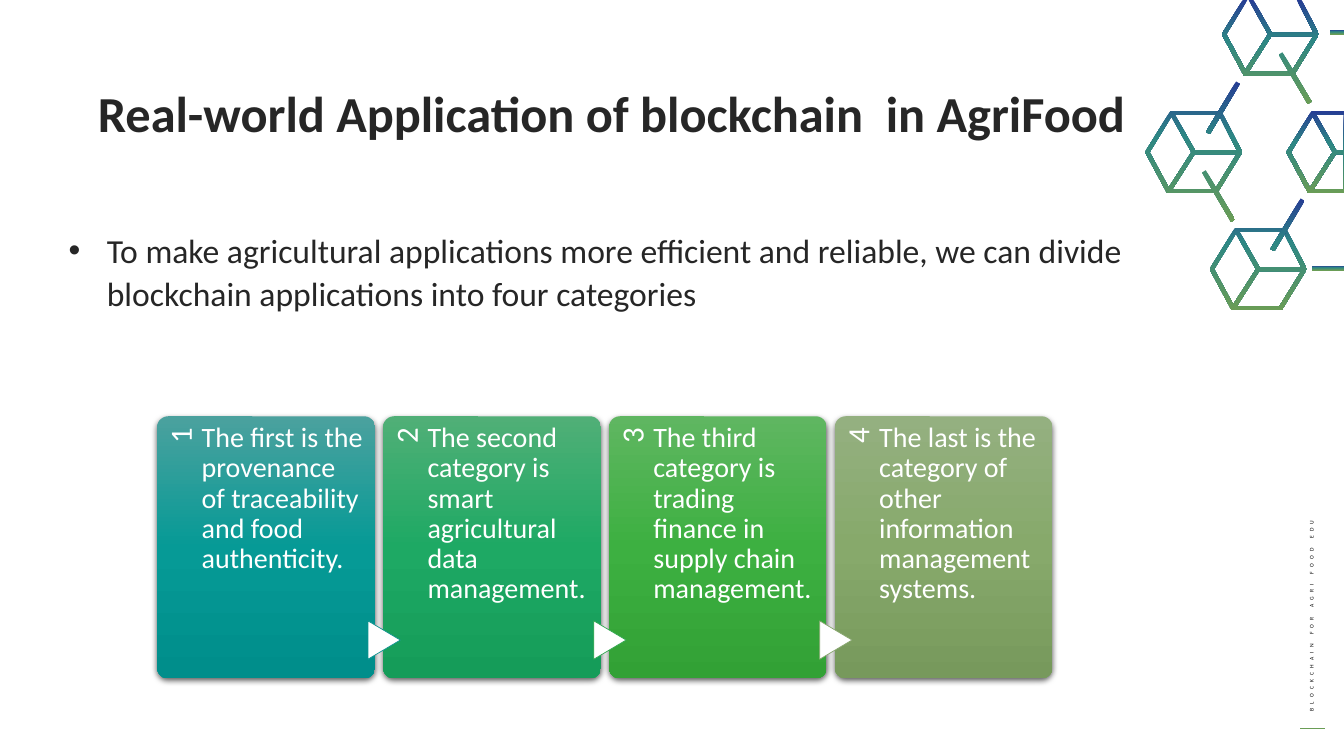
import copy
import math
from dataclasses import dataclass
from typing import NamedTuple

import pptx
import pptx.dml.color
import pptx.enum.shapes
import pptx.enum.text
import pptx.oxml
import pptx.oxml.ns
import pptx.util

Inches = pptx.util.Inches
Pt = pptx.util.Pt
RGB = pptx.dml.color.RGBColor.from_string
MSO = pptx.enum.shapes.MSO_SHAPE
ALIGN = pptx.enum.text.PP_ALIGN
qn = pptx.oxml.ns.qn
NS = pptx.oxml.ns.nsdecls("a")
SLIDE_W, SLIDE_H = 13.33, 7.5

Point = tuple[float, float]
Contour = list[Point]


@dataclass(frozen=True)
class Theme:
    font: str = "Calibri"
    ink: str = "262626"
    black: str = "010101"
    white: str = "FFFFFF"
    chain: tuple[str, str, str] = ("263D94", "2D8784", "6A9D56")
    chain_middle: float = 0.39
    title: float = 36
    body: float = 24
    number: float = 22
    card: float = 20
    label: float = 4


class Card(NamedTuple):
    text: str
    colors: tuple[str, str, str]
    arrow_line: str = ""


class Cube(NamedTuple):
    """A cube of the chain, placed by its left tip, and the bars that leave it."""
    x: float
    y: float
    bars: tuple[tuple[Point, Point], ...] = ()


THEME = Theme()

CARDS = (
    Card("The first is the provenance of traceability and food authenticity.",
         ("4BA19E", "069A96", "008E8B")),
    Card("The second category is smart agricultural data management.",
         ("50AF77", "1EA964", "159C59"), "0D9390"),
    Card("The third category is trading finance in supply chain management.",
         ("5FB661", "3DB041", "32A135"), "32A851"),
    Card("The last is the category of other information management systems.",
         ("94B080", "87A96B", "77995C"), "87A66E"),
)
CARD_LEFT, CARD_TOP, CARD_W, CARD_H, CARD_STEP = 1.56, 4.13, 2.16, 2.6, 2.24

BAR_UP = ((0.62, -0.18), (0.92, -0.68))
BAR_DOWN = ((0.58, 0.2), (0.87, 0.69))
BAR_W = 0.045
CUBES = (Cube(12, 2.66, (BAR_UP,)), Cube(12.76, 1.5), Cube(12.12, 0.33, (BAR_DOWN,)),
         Cube(11.36, 1.5, (BAR_UP, BAR_DOWN)))
STUBS = ((13.01, 2.66), (13.19, 0.32))
HUB = (0.48, 0.01)
RING = [(0.02, 0.01), (0.26, -0.38), (0.74, -0.38), (0.94, 0.01), (0.7, 0.4), (0.23, 0.4)]


def place(sp, left: float, top: float, width: float, height: float) -> None:
    sp.left, sp.top = Inches(left), Inches(top)
    sp.width, sp.height = Inches(width), Inches(height)


def write(sp, text: str, *, size: float, color: str, bold: bool = False,
          align=ALIGN.LEFT, line: float = 1.0, before: float = 0, after: float = 0,
          insets: tuple[float, float, float, float] = (0.1, 0.05, 0.1, 0.05)):
    """Fill a shape with one formatted paragraph; insets are left, top, right, bottom."""
    tf = sp.text_frame
    tf.word_wrap = True
    tf.auto_size = pptx.enum.text.MSO_AUTO_SIZE.NONE
    tf.vertical_anchor = pptx.enum.text.MSO_ANCHOR.TOP
    tf.margin_left, tf.margin_top, tf.margin_right, tf.margin_bottom = map(Inches, insets)
    p = tf.paragraphs[0]
    p.alignment, p.line_spacing = align, line
    p.space_before, p.space_after = Pt(before), Pt(after)
    r = p.add_run()
    r.text = text
    r.font.name, r.font.size, r.font.bold = THEME.font, Pt(size), bold
    r.font.color.rgb = RGB(color)
    return p


def add_text(s, left: float, top: float, width: float, height: float, text: str,
             rotation: float = 0, **fmt):
    sp = s.shapes.add_textbox(*map(Inches, (left, top, width, height)))
    sp.rotation = rotation
    return write(sp, text, **fmt)


def fill_down(sp, colors, middle: float = 0.5) -> None:
    """Three-colour gradient running from top to bottom."""
    sp.fill.gradient()
    sp.fill.gradient_angle = 270
    gs_lst = next(sp._element.iter(qn("a:gsLst")))
    gs_lst.append(copy.deepcopy(gs_lst[0]))
    for stop, position, color in zip(sp.fill.gradient_stops, (0, middle, 1), colors):
        stop.position, stop.color.rgb = position, RGB(color)


def chain_color(t: float) -> str:
    """Colour of the chain gradient at t, from 0 (top) to 1 (bottom)."""
    first, second, third = map(RGB, THEME.chain)
    m = THEME.chain_middle
    a, b, f = (first, second, t / m) if t < m else (second, third, (t - m) / (1 - m))
    return "".join(f"{round(u + (v - u) * f):02X}" for u, v in zip(a, b))


def scaled(points: Contour, center: Point, factor: float) -> Contour:
    return [tuple(c + (v - c) * factor for v, c in zip(pt, center)) for pt in points]


def clipped(points: Contour, axis: int, limit: float, sign: int) -> Contour:
    """Part of a convex outline where sign * (coordinate - limit) is not negative."""
    kept = []
    for a, b in zip(points, points[1:] + points[:1]):
        da, db = (sign * (pt[axis] - limit) for pt in (a, b))
        if da >= 0:
            kept.append(a)
        if da * db < 0:
            kept.append(tuple(u + (v - u) * da / (da - db) for u, v in zip(a, b)))
    return kept


def cube_contours(cube: Cube) -> list[Contour]:
    """Outer edge and three openings, cut at the edges of the slide."""
    contours = [scaled(RING, HUB, 1.05)]
    for i in (1, 3, 5):
        face = [RING[i], RING[(i + 1) % 6], RING[(i + 2) % 6], HUB]
        middle = tuple(sum(values) / 4 for values in zip(*face))
        contours.append(scaled(face, middle, 0.9))
    moved = [[(cube.x + x, cube.y + y) for x, y in c] for c in contours]
    cut = [clipped(clipped(c, 0, SLIDE_W, -1), 1, 0, 1) for c in moved]
    return [c for c in cut if c]


def bar_contour(start: Point, end: Point) -> Contour:
    (x1, y1), (x2, y2) = start, end
    k = BAR_W / 2 / math.dist(start, end)
    dx, dy = (y1 - y2) * k, (x2 - x1) * k
    return [(x1 + dx, y1 + dy), (x2 + dx, y2 + dy), (x2 - dx, y2 - dy), (x1 - dx, y1 - dy)]


def draw_piece(s, contours: list[Contour], top: float, bottom: float) -> None:
    """Draw an outline coloured by its place in the span from top to bottom."""
    outer, *openings = [[(Inches(x), Inches(y)) for x, y in c] for c in contours]
    builder = s.shapes.build_freeform(*outer[0])
    builder.add_line_segments(outer[1:], close=True)
    for opening in openings:
        builder.move_to(*opening[0])
        builder.add_line_segments(opening[1:], close=True)
    sp = builder.convert_to_shape()
    sp.shadow.inherit = False
    sp.line.fill.background()
    ys = [y for _, y in contours[0]]
    low, high = ((y - top) / (bottom - top) for y in (min(ys), max(ys)))
    m = THEME.chain_middle
    middle = m if low < m < high else (low + high) / 2
    fill_down(sp, map(chain_color, (low, middle, high)), (middle - low) / (high - low))


def draw_chain(s) -> None:
    pieces = [[cube_contours(c)] + [
        [bar_contour(*((c.x + x, c.y + y) for x, y in bar))] for bar in c.bars]
        for c in CUBES]
    pieces += [[[bar_contour((x, y), (SLIDE_W, y))]] for x, y in STUBS]
    for parts in pieces:
        ys = [y for contours in parts for _, y in contours[0]]
        for contours in parts:
            draw_piece(s, contours, min(ys), max(ys))


def draw_card(s, index: int, card: Card) -> None:
    left = CARD_LEFT + index * CARD_STEP
    sp = s.shapes.add_shape(MSO.ROUNDED_RECTANGLE,
                            *map(Inches, (left, CARD_TOP, CARD_W, CARD_H)))
    sp.adjustments[0] = 0.05
    sp.line.fill.background()
    fill_down(sp, card.colors)
    sp.shadow.inherit = False
    sp._element.spPr.find(qn("a:effectLst")).append(pptx.oxml.parse_xml(
        f'<a:outerShdw {NS} blurRad="{Pt(4.5)}" dist="{Pt(1.5)}" dir="5400000" '
        'rotWithShape="0"><a:srgbClr val="000000"><a:alpha val="63000"/>'
        '</a:srgbClr></a:outerShdw>'))
    add_text(s, left - 0.85, 4.98, 2.13, 0.43, str(index + 1), rotation=270,
             size=THEME.number, color=THEME.white, align=ALIGN.RIGHT, line=0.9,
             insets=(0, 0.08, 0.11, 0))
    if card.arrow_line:
        arrow = s.shapes.add_shape(MSO.FLOWCHART_EXTRACT,
                                   *map(Inches, (left - 0.18, 6.19, 0.38, 0.32)))
        arrow.rotation = 90
        arrow.shadow.inherit = False
        arrow.fill.solid()
        arrow.fill.fore_color.rgb = RGB(THEME.white)
        arrow.line.color.rgb, arrow.line.width = RGB(card.arrow_line), Pt(0.5)
    add_text(s, left + 0.44, CARD_TOP, 1.61, CARD_H, card.text, size=THEME.card,
             color=THEME.white, line=0.9, insets=(0, 0.07, 0, 0))


def draw_side_label(s) -> None:
    rule = s.shapes.add_connector(pptx.enum.shapes.MSO_CONNECTOR.STRAIGHT,
                                  *map(Inches, (13.14, 7.23, 12.89, 7.23)))
    rule.line.color.rgb, rule.line.width = RGB(THEME.chain[-1]), Pt(0.75)
    rule._element.spPr.append(pptx.oxml.parse_xml(f"<a:effectLst {NS}/>"))
    p = add_text(s, 11.54, 5.6, 2.94, 0.17, "BLOCKCHAIN FOR AGRI FOOD EDU", rotation=270,
                 size=THEME.label, color=THEME.black)
    p.runs[0].font._element.set("spc", "300")


def main() -> None:
    prs = pptx.Presentation()
    prs.slide_width, prs.slide_height = Inches(SLIDE_W), Inches(SLIDE_H)
    s = prs.slides.add_slide(prs.slide_layouts[1])
    title, body = s.shapes.title, s.placeholders[1]
    place(title, 0.87, 0.83, 11.59, 1.41)
    write(title, "Real-world Application of blockchain  in AgriFood", size=THEME.title,
          color=THEME.ink, bold=True, line=0.9, before=10)
    place(body, 0.58, 2.2, 11.59, 5.13)
    p = write(body, "To make agricultural applications more efficient and reliable, we can "
              "divide blockchain applications into four categories", size=THEME.body,
              color=THEME.ink, line=1.07, before=10, after=8)
    pPr = p._p.get_or_add_pPr()
    pPr.set("marL", str(Inches(0.38)))
    pPr.set("indent", str(Inches(-0.38)))
    for bullet in ('buFont {} typeface="Arial"', 'buChar {} char="•"'):
        pPr.append(pptx.oxml.parse_xml(f"<a:{bullet.format(NS)}/>"))

    draw_side_label(s)
    draw_chain(s)
    for index, card in enumerate(CARDS):
        draw_card(s, index, card)
    prs.save("out.pptx")


if __name__ == "__main__":
    main()
